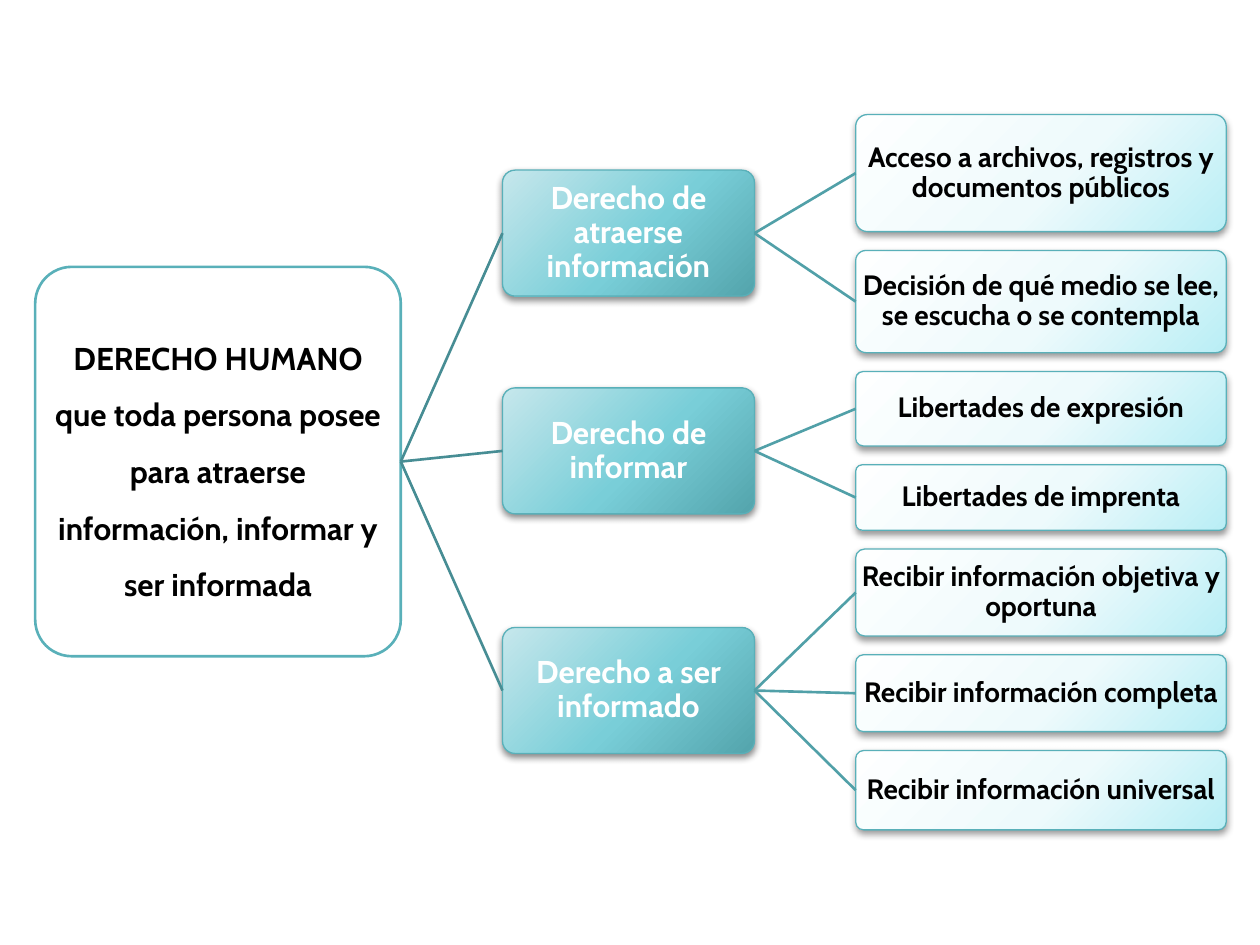
import pptx
import pptx.dml.color
import pptx.enum.shapes
import pptx.enum.text
import pptx.oxml
import pptx.oxml.ns
import pptx.util

Cm = pptx.util.Cm
Pt = pptx.util.Pt
RGB = pptx.dml.color.RGBColor.from_string
NAMESPACE = pptx.oxml.ns.nsdecls("a")

# Colours, type sizes and line widths for each level of the tree
THEME = {
    "font": "Cabin",
    "border": "59B0B9",
    "root": {"size": 18, "text": "000000", "spacing": 1.5, "border": 1.5,
             "fill": "FFFFFF", "link": "478D94"},
    "branch": {"size": 18, "text": "FFFFFF", "spacing": 0.9, "border": 0.75,
               "stops": {0: "C6E7EC", 55: "79CED8", 100: "53A4AC"},
               "shadow": 45, "link": "51A0A8"},
    "leaf": {"size": 16, "text": "000000", "spacing": 0.9, "border": 0.75,
             "stops": {0: "FEFFFF", 55: "EEFAFC", 100: "B9EEF5"}, "shadow": 40},
}

# Left and width of each column, in cm
COLUMNS = {"root": (0.71, 7.37), "branch": (10.13, 5.08), "leaf": (17.25, 7.47)}
BRANCH_HEIGHT = 2.54
LEAF_TOP = 2.31
LEAF_GAP = 0.38

ROOT_TEXT = ("DERECHO HUMANO que toda persona posee para atraerse información, "
             "informar y ser informada")
# Each branch: text, top, then its leaves with their heights
BRANCHES = [
    ("Derecho de atraerse información", 3.43, [
        ("Acceso a archivos, registros y documentos públicos", 2.36),
        ("Decisión de qué medio se lee, se escucha o se contempla", 2.06)]),
    ("Derecho de informar", 7.82, [
        ("Libertades de expresión", 1.5),
        ("Libertades de imprenta", 1.32)]),
    ("Derecho a ser informado", 12.65, [
        ("Recibir información objetiva y oportuna", 1.75),
        ("Recibir información completa", 1.55),
        ("Recibir información universal", 1.6)]),
]


def add_node(level, text, top, height):
    style = THEME[level]
    left, width = COLUMNS[level]
    box = page.shapes.add_shape(pptx.enum.shapes.MSO_SHAPE.ROUNDED_RECTANGLE,
                                Cm(left), Cm(top), Cm(width), Cm(height))
    box.adjustments[0] = 0.1
    box.shadow.inherit = False
    box.line.color.rgb = RGB(THEME["border"])
    box.line.width = Pt(style["border"])

    # Plain fill for the root, radial gradient and shadow for the rest
    properties = box._element.spPr
    if "fill" in style:
        box.fill.solid()
        box.fill.fore_color.rgb = RGB(style["fill"])
    else:
        stops = "".join(f'<a:gs pos="{place * 1000}"><a:srgbClr val="{colour}"/></a:gs>'
                        for place, colour in style["stops"].items())
        properties.insert(2, pptx.oxml.parse_xml(
            f'<a:gradFill {NAMESPACE} rotWithShape="1"><a:gsLst>{stops}</a:gsLst>'
            '<a:path path="circle"><a:fillToRect l="-40000" t="-90000" '
            'r="140000" b="190000"/></a:path></a:gradFill>'))
        properties.find(pptx.oxml.ns.qn("a:effectLst")).append(pptx.oxml.parse_xml(
            f'<a:outerShdw {NAMESPACE} blurRad="{Pt(4)}" dist="{Pt(2)}" dir="5400000" '
            'rotWithShape="0"><a:srgbClr val="000000">'
            f'<a:alpha val="{style["shadow"] * 1000}"/></a:srgbClr></a:outerShdw>'))

    # Text
    frame = box.text_frame
    frame_format = {"word_wrap": True,
                    "vertical_anchor": pptx.enum.text.MSO_ANCHOR.MIDDLE}
    for side in ("left", "top", "right", "bottom"):
        frame_format[f"margin_{side}"] = Cm(0.03)
    para = frame.paragraphs[0]
    span = para.add_run()
    span.text = text
    formats = [
        (frame, frame_format),
        (para, {"alignment": pptx.enum.text.PP_ALIGN.CENTER,
                "line_spacing": style["spacing"]}),
        (span.font, {"name": THEME["font"], "size": Pt(style["size"]), "bold": True}),
    ]
    for target, values in formats:
        for name, value in values.items():
            setattr(target, name, value)
    span.font.color.rgb = RGB(style["text"])
    return box


def link(parent, child, colour):
    line = page.shapes.add_connector(pptx.enum.shapes.MSO_CONNECTOR.STRAIGHT, 0, 0, 0, 0)
    line.begin_connect(parent, 3)
    line.end_connect(child, 1)
    line.line.color.rgb = RGB(colour)
    line.line.width = Pt(1.5)
    line._element.spPr.append(pptx.oxml.parse_xml(f"<a:effectLst {NAMESPACE}/>"))


deck = pptx.Presentation()
deck.slide_width, deck.slide_height = Cm(25.4), Cm(19.05)
page = deck.slides.add_slide(deck.slide_layouts[6])

# Tree, from the root on the left to the leaves on the right
root = add_node("root", ROOT_TEXT, 5.38, 7.85)
leaf_top = LEAF_TOP
for branch_text, branch_top, leaves in BRANCHES:
    branch = add_node("branch", branch_text, branch_top, BRANCH_HEIGHT)
    link(root, branch, THEME["root"]["link"])
    for leaf_text, leaf_height in leaves:
        leaf = add_node("leaf", leaf_text, leaf_top, leaf_height)
        link(branch, leaf, THEME["branch"]["link"])
        leaf_top += leaf_height + LEAF_GAP

deck.save("out.pptx")
